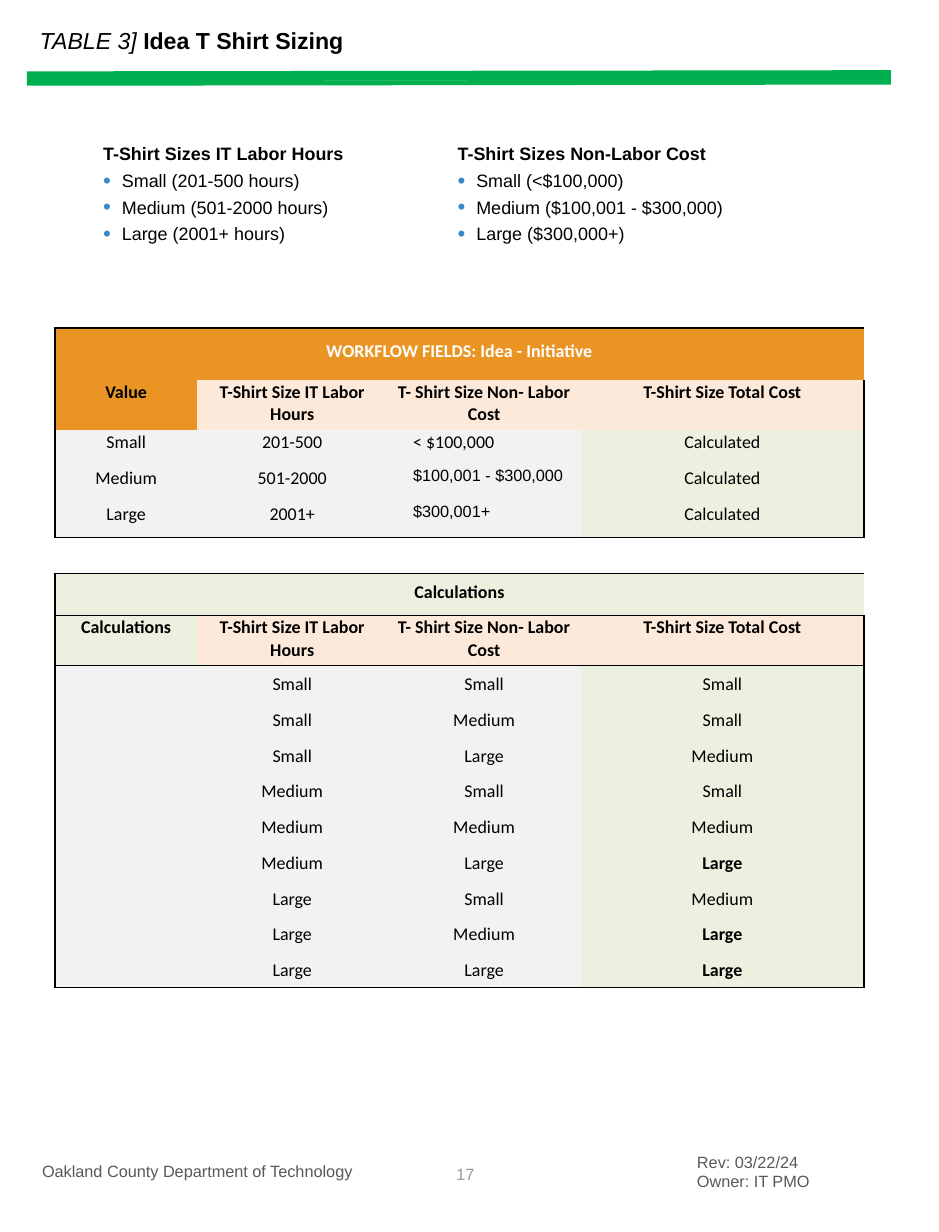
from lxml import etree
from pptx import Presentation
from pptx.dml.color import RGBColor
from pptx.enum.shapes import MSO_CONNECTOR
from pptx.enum.text import MSO_ANCHOR, PP_ALIGN
from pptx.oxml.ns import qn
from pptx.util import Pt

PX = 4572  # EMU per px, 200 px to the inch
STRAIGHT = MSO_CONNECTOR.STRAIGHT
TOP, MIDDLE, BOTTOM = MSO_ANCHOR.TOP, MSO_ANCHOR.MIDDLE, MSO_ANCHOR.BOTTOM
LEFT, CENTER, RIGHT = PP_ALIGN.LEFT, PP_ALIGN.CENTER, PP_ALIGN.RIGHT

BLACK = RGBColor(0x00, 0x00, 0x00)
WHITE = RGBColor(0xFF, 0xFF, 0xFF)
GREEN = RGBColor(0x00, 0xB0, 0x50)
FOOTER_GRAY = RGBColor(0x59, 0x59, 0x59)
PAGE_GRAY = RGBColor(0x9B, 0x9B, 0x9B)
BULLET_BLUE = RGBColor(0x39, 0x89, 0xC9)
ORANGE = RGBColor(0xEA, 0x94, 0x23)
PEACH = RGBColor(0xFD, 0xE9, 0xD9)
PALE_GRAY = RGBColor(0xF2, 0xF2, 0xF2)
PALE_GREEN = RGBColor(0xEB, 0xF1, 0xDE)

PLAIN_TABLE_STYLE = "{2D5ABB26-0587-4C30-8999-92F81FD0307C}"
COLUMN_WIDTHS = [242, 324, 330, 482]
TITLE_ROW, HEADER_ROW, VALUE_ROW = 89, 76, 61
SIZE_HEADERS = ["T-Shirt Size IT Labor Hours", "T- Shirt Size Non- Labor Cost",
                "T-Shirt Size Total Cost"]
WORKFLOW_VALUES = [
    ("Small", "201-500", "< $100,000", "Calculated"),
    ("Medium", "501-2000", "$100,001 - $300,000", "Calculated"),
    ("Large", "2001+", "$300,001+", "Calculated"),
]
SIZES = ["Small", "Medium", "Large"]
TOTAL_SIZES = ["Small", "Small", "Medium", "Small", "Medium", "Large",
               "Medium", "Large", "Large"]


def px(value):
    return value * PX


def style(run, size, color, font="Arial", bold=False, italic=False):
    run.font.name = font
    run.font.size = Pt(size)
    run.font.bold = bold
    run.font.italic = italic
    run.font.color.rgb = color


def add_text(slide, left, top, width, height, lines, size, color,
             align=LEFT, anchor=TOP):
    box = slide.shapes.add_textbox(px(left), px(top), px(width), px(height))
    frame = box.text_frame
    frame.word_wrap = True
    frame.vertical_anchor = anchor
    frame.text = "\n".join(lines)
    for paragraph in frame.paragraphs:
        paragraph.alignment = align
        for run in paragraph.runs:
            style(run, size, color)
    return frame


def add_bullet(paragraph):
    properties = paragraph._p.get_or_add_pPr()
    properties.set("marL", str(px(32)))
    properties.set("indent", str(px(-32)))
    color = etree.SubElement(properties, qn("a:buClr"))
    etree.SubElement(color, qn("a:srgbClr"), val=str(BULLET_BLUE))
    etree.SubElement(properties, qn("a:buSzPct"), val="125000")
    etree.SubElement(properties, qn("a:buFont"), typeface="Arial")
    etree.SubElement(properties, qn("a:buChar"), char="•")


def add_size_list(slide, left, heading, items):
    frame = add_text(slide, left, 234, 494, 252, [heading, *items], 11, BLACK)
    head, *bullets = frame.paragraphs
    head.runs[0].font.bold = True
    for paragraph in bullets:
        paragraph.space_before = Pt(3.1)
        add_bullet(paragraph)


def add_rule(slide, left, start_y, right, end_y, weight):
    rule = slide.shapes.add_connector(STRAIGHT, px(left), px(start_y), px(right), px(end_y))
    rule.line.color.rgb = GREEN
    rule.line.width = Pt(weight)
    etree.SubElement(rule._element.spPr, qn("a:effectLst"))


def set_cell(cell, text, fill, color=BLACK, bold=False, anchor=TOP,
             font="Calibri", size=11, indent=None):
    cell.margin_left = cell.margin_right = cell.margin_top = px(2)
    cell.margin_bottom = px(10)
    cell.vertical_anchor = anchor
    if fill is None:
        cell.fill.background()
    else:
        cell.fill.solid()
        cell.fill.fore_color.rgb = fill
    paragraph = cell.text_frame.paragraphs[0]
    paragraph.alignment = CENTER
    if indent:
        paragraph.alignment = LEFT
        paragraph._p.get_or_add_pPr().set("marL", str(px(indent)))
    if text:
        paragraph.text = text
        style(paragraph.runs[0], size, color, font, bold)
    else:
        # An empty cell still needs a small line height
        etree.SubElement(paragraph._p, qn("a:endParaRPr"), sz=str(size * 100))


def set_borders(cell, sides):
    """Draw 1 pt black lines on the sides, listed in the order L, R, T, B."""
    properties = cell._tc.get_or_add_tcPr()
    for position, side in enumerate(side for side in "LRTB" if side in sides):
        line = etree.Element(qn(f"a:ln{side}"), w=str(Pt(1)))
        fill = etree.SubElement(line, qn("a:solidFill"))
        etree.SubElement(fill, qn("a:srgbClr"), val=str(BLACK))
        properties.insert(position, line)


def frame_rows(table, first, last):
    final_column = len(COLUMN_WIDTHS) - 1
    for row in range(first, last + 1):
        for column in range(final_column + 1):
            edges = [("L", column == 0), ("R", column == final_column),
                     ("T", row == first), ("B", row == last)]
            set_borders(table.cell(row, column), [side for side, on in edges if on])


def fill_heading(table, row, title, title_color, fill, first_header):
    table.cell(row, 0).merge(table.cell(row, 3))
    set_cell(table.cell(row, 0), title, fill, title_color, True, MIDDLE)
    for column, header in enumerate([first_header, *SIZE_HEADERS]):
        set_cell(table.cell(row + 1, column), header, PEACH if column else fill, bold=True)


def add_sizing_table(slide):
    heights = ([TITLE_ROW, HEADER_ROW] + [VALUE_ROW] * 4
               + [72, HEADER_ROW] + [VALUE_ROW] * 9)
    shape = slide.shapes.add_table(len(heights), len(COLUMN_WIDTHS), px(94), px(559),
                                   px(sum(COLUMN_WIDTHS)), px(sum(heights)))
    table = shape.table
    table.first_row = table.horz_banding = False
    table._tbl.tblPr.find(qn("a:tableStyleId")).text = PLAIN_TABLE_STYLE
    for column, width in zip(table.columns, COLUMN_WIDTHS):
        column.width = px(width)
    for row, height in zip(table.rows, heights):
        row.height = px(height)

    # Workflow fields
    fill_heading(table, 0, "WORKFLOW FIELDS: Idea - Initiative", WHITE, ORANGE, "Value")
    for row, values in enumerate(WORKFLOW_VALUES, start=2):
        for column, text in enumerate(values):
            fill = PALE_GREEN if column == 3 else PALE_GRAY
            is_cost = column == 2
            font, size = ("Arial", 10) if is_cost and row > 2 else ("Calibri", 11)
            set_cell(table.cell(row, column), text, fill, font=font, size=size,
                     indent=42 if is_cost else None)

    # Open row between the two blocks
    for column in range(len(COLUMN_WIDTHS)):
        set_cell(table.cell(5, column), "", None)

    # Calculations: every pairing of labor size and cost size
    fill_heading(table, 6, "Calculations", BLACK, PALE_GREEN, "Calculations")
    for index, total in enumerate(TOTAL_SIZES):
        values = ["", SIZES[index // 3], SIZES[index % 3], total]
        for column, text in enumerate(values):
            is_total = column == 3
            set_cell(table.cell(8 + index, column), text,
                     PALE_GREEN if is_total else PALE_GRAY,
                     bold=is_total and total == "Large", anchor=BOTTOM)

    # Block outlines
    for first, last in [(0, 4), (6, 6), (7, 16)]:
        frame_rows(table, first, last)


def main():
    prs = Presentation()
    prs.slide_width, prs.slide_height = px(1600), px(2100)
    slide = prs.slides.add_slide(prs.slide_layouts[6])

    # Title and green rules
    add_rule(slide, 46, 142, 1518, 140, 3)
    add_rule(slide, 46, 130, 1518, 128, 6)
    title = add_text(slide, 48, 36, 1470, 64, ["TABLE 3] "], 14.2, BLACK, anchor=MIDDLE)
    title.paragraphs[0].runs[0].font.italic = True
    style(title.paragraphs[0].add_run(), 14.2, BLACK, bold=True)
    title.paragraphs[0].runs[1].text = "Idea T Shirt Sizing"

    # Size definitions
    add_size_list(slide, 156, "T-Shirt Sizes IT Labor Hours",
                  ["Small (201-500 hours)", "Medium (501-2000 hours)", "Large (2001+ hours)"])
    add_size_list(slide, 760, "T-Shirt Sizes Non-Labor Cost",
                  ["Small (<$100,000)", "Medium ($100,001 - $300,000)", "Large ($300,000+)"])

    add_sizing_table(slide)

    # Footer
    add_text(slide, 52, 1970, 660, 54, ["Oakland County Department of Technology"],
             10, FOOTER_GRAY)
    add_text(slide, 206, 1962, 622, 80, ["17"], 10, PAGE_GRAY, RIGHT, MIDDLE)
    add_text(slide, 1168, 1954, 240, 88, ["Rev: 03/22/24", "Owner: IT PMO"], 10, FOOTER_GRAY)

    prs.save("out.pptx")


if __name__ == "__main__":
    main()
